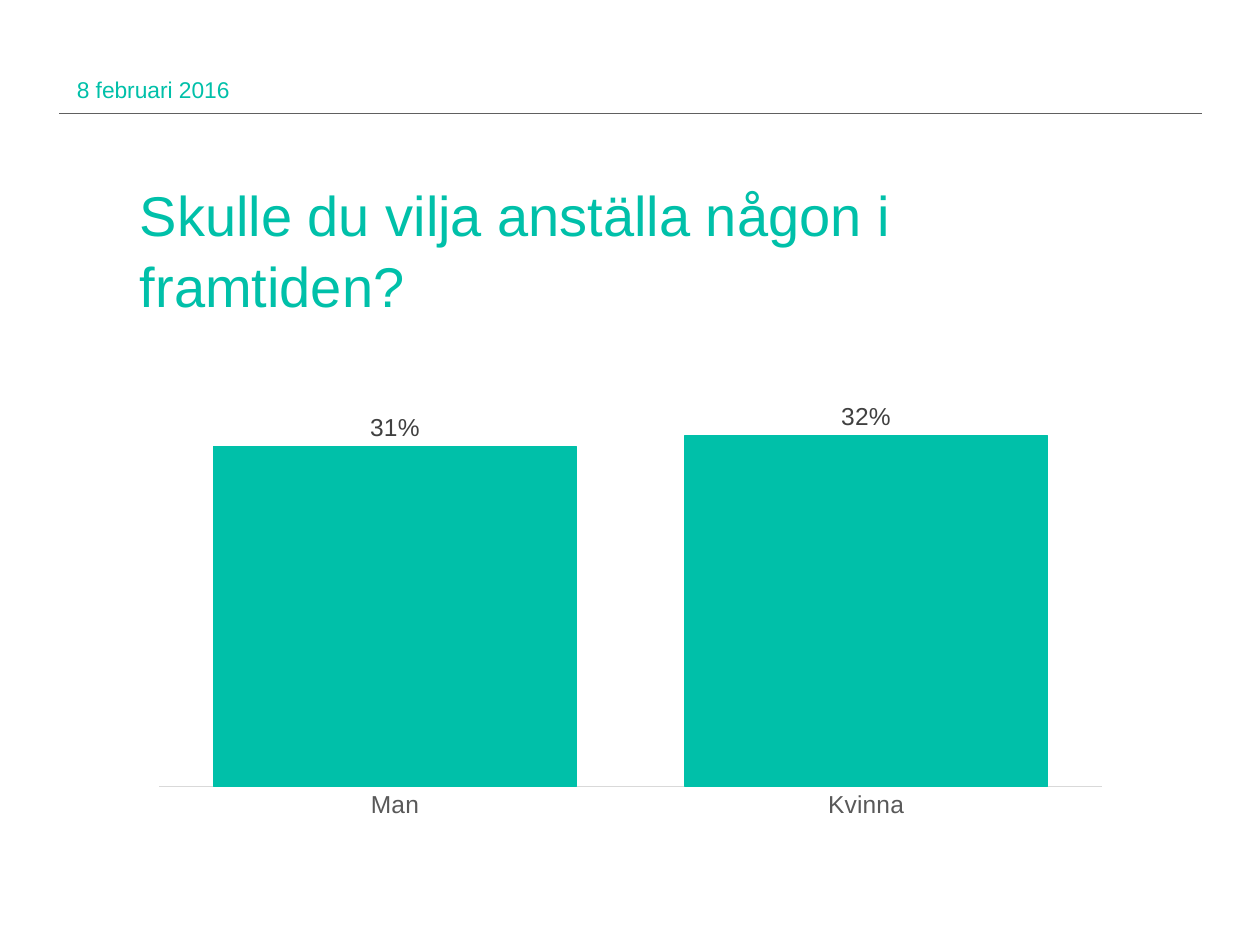
from lxml import etree
from pptx import Presentation
from pptx.chart.data import CategoryChartData
from pptx.dml.color import RGBColor
from pptx.enum.chart import XL_CHART_TYPE, XL_LABEL_POSITION, XL_TICK_MARK
from pptx.enum.shapes import MSO_CONNECTOR
from pptx.enum.text import MSO_ANCHOR, MSO_AUTO_SIZE, PP_ALIGN
from pptx.oxml.ns import qn
from pptx.util import Inches, Pt

COLUMN = XL_CHART_TYPE.COLUMN_CLUSTERED
OUTSIDE_END = XL_LABEL_POSITION.OUTSIDE_END
NO_TICKS = XL_TICK_MARK.NONE
STRAIGHT = MSO_CONNECTOR.STRAIGHT
TOP, MIDDLE = MSO_ANCHOR.TOP, MSO_ANCHOR.MIDDLE
NO_AUTOFIT = MSO_AUTO_SIZE.NONE
LEFT = PP_ALIGN.LEFT

TEAL = RGBColor(0x00, 0xC0, 0xA9)
RULE_GREY = RGBColor(0x60, 0x60, 0x60)
AXIS_GREY = RGBColor(0xD9, 0xD9, 0xD9)
CATEGORY_GREY = RGBColor(0x59, 0x59, 0x59)
LABEL_GREY = RGBColor(0x40, 0x40, 0x40)
BLACK = RGBColor(0x00, 0x00, 0x00)
FONT = "Arial"


def set_font(font, size, color):
    font.name = FONT
    font.size = Pt(size)
    font.bold = False
    font.color.rgb = color


def write_text(sp, text, size, anchor, spacing):
    """Fill a shape with one teal, left-aligned paragraph without insets."""
    tf = sp.text_frame
    tf.word_wrap = True
    tf.auto_size = NO_AUTOFIT
    tf.vertical_anchor = anchor
    tf.margin_left = tf.margin_top = tf.margin_right = tf.margin_bottom = 0
    p = tf.paragraphs[0]
    p.alignment = LEFT
    p.line_spacing = spacing
    p.space_before = Pt(0)
    r = p.add_run()
    r.text = text
    set_font(r.font, size, TEAL)


prs = Presentation()
prs.slide_width, prs.slide_height = Inches(10), Inches(7.5)
s = prs.slides.add_slide(prs.slide_layouts[5])

# Header rule and date
rule = s.shapes.add_connector(STRAIGHT, Inches(0.47), Inches(0.9), Inches(9.54), Inches(0.9))
rule.line.color.rgb = RULE_GREY
rule.line.width = Pt(0.5)
etree.SubElement(rule._element.spPr, qn("a:effectLst"))

date = s.shapes.add_textbox(Inches(0.61), Inches(0.51), Inches(2.33), Inches(0.4))
write_text(date, "8 februari 2016", 13, MIDDLE, 1.0)

# Title
title = s.shapes.title
title.left, title.top = Inches(1.11), Inches(1.41)
title.width, title.height = Inches(7.79), Inches(0.96)
write_text(title, "Skulle du vilja anställa någon i framtiden?", 32, TOP, 1.05)

# Column chart
data = CategoryChartData(number_format="0%")
data.categories = ["Man", "Kvinna"]
data.add_series("Series 1", [0.31, 0.32])
chart = s.shapes.add_chart(
    COLUMN, Inches(1.11), Inches(2.68), Inches(7.79), Inches(3.9), data
).chart
set_font(chart.font, 10, BLACK)
chart.has_title = False
chart.has_legend = False

category_axis = chart.category_axis
category_axis.major_tick_mark = NO_TICKS
category_axis.minor_tick_mark = NO_TICKS
category_axis.format.line.color.rgb = AXIS_GREY
category_axis.format.line.width = Pt(0.75)
set_font(category_axis.tick_labels.font, 14, CATEGORY_GREY)

value_axis = chart.value_axis
value_axis.minimum_scale, value_axis.maximum_scale = 0, 0.4
value_axis.has_major_gridlines = False
value_axis.visible = False

plot = chart.plots[0]
plot.gap_width = 30
plot.vary_by_categories = False

series = plot.series[0]
series.format.fill.solid()
series.format.fill.fore_color.rgb = TEAL
series.format.line.color.rgb = TEAL
series.format.line.width = Pt(0.75)

labels = series.data_labels
labels.show_value = True
labels.number_format = "0%"
labels.number_format_is_linked = False
labels.position = OUTSIDE_END
set_font(labels.font, 14, LABEL_GREY)

prs.save("out.pptx")
